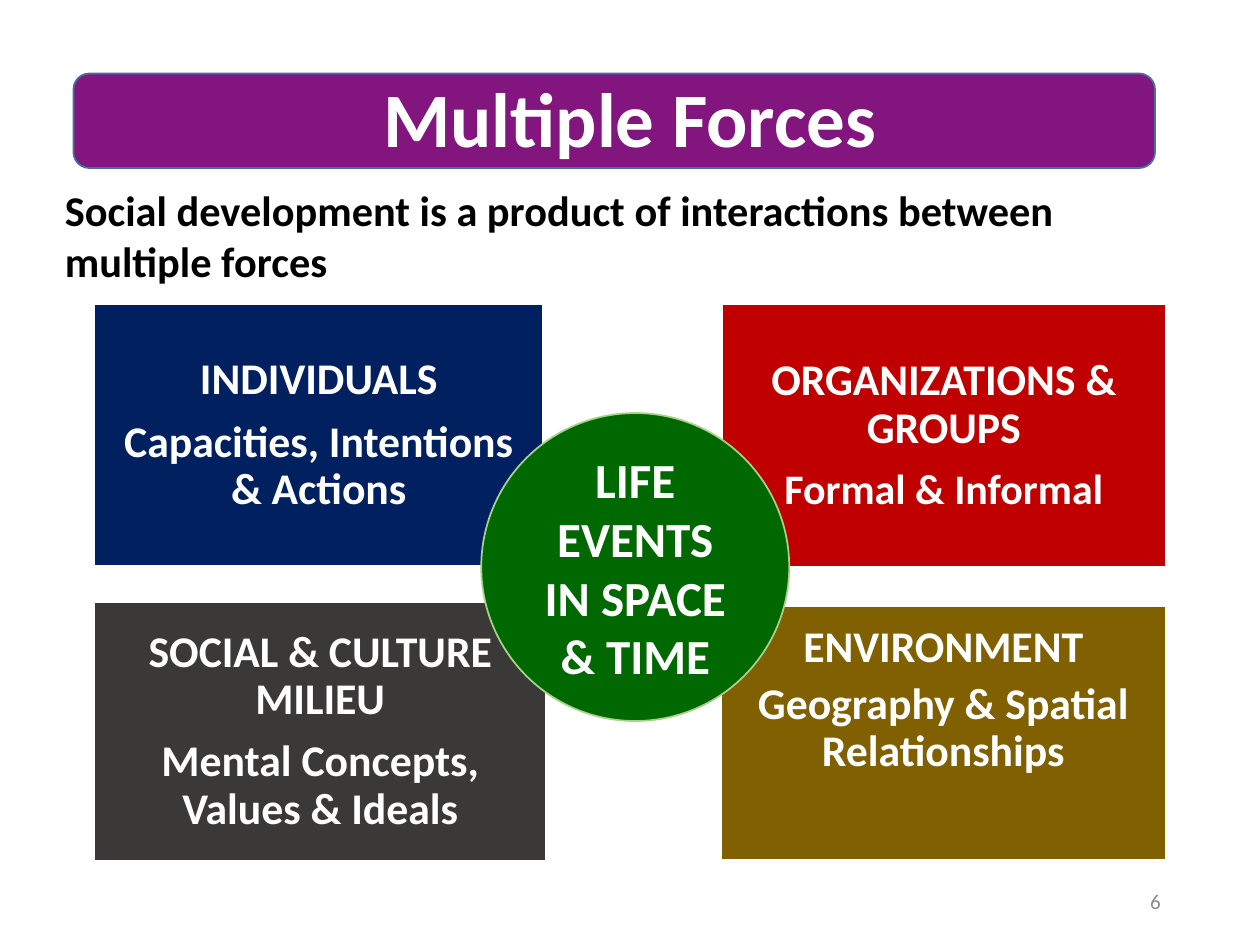
from pptx import Presentation
from pptx import util as u
from pptx.dml.color import RGBColor
from pptx.enum import shapes, text

WHITE = "FFFFFF"
MIDDLE, TOP = text.MSO_ANCHOR.MIDDLE, text.MSO_ANCHOR.TOP
LEFT, CENTER, RIGHT = text.PP_ALIGN.LEFT, text.PP_ALIGN.CENTER, text.PP_ALIGN.RIGHT

# position, fill, anchor, paragraphs (text, size, line spacing, space after)
FORCES = [
    ((54, 344.2, 258, 147.6), "3B3838", MIDDLE,
     [("SOCIAL & CULTURE MILIEU", 25, 0.9, 8.75),
      ("Mental Concepts, Values & Ideals", 25, 0.9, 8.75)]),
    ((54, 173.8, 256.3, 149.8), "002060", MIDDLE,
     [("INDIVIDUALS", 25, 0.9, 8.75),
      ("Capacities, Intentions\n& Actions", 25, 0.9, 8.75)]),
    ((412, 346.3, 254, 145), "806000", TOP,
     [("ENVIRONMENT", 25, 1.0, 6),
      ("Geography & Spatial Relationships", 25, 0.9, 8.75)]),
    ((412.6, 173.8, 253.4, 150.3), "C00000", MIDDLE,
     [("ORGANIZATIONS & GROUPS", 25, 0.9, 8.75),
      ("Formal & Informal", 24, 0.9, 8.4)]),
]


def rgb(hex_color):
    return RGBColor.from_string(hex_color)


def points(box):
    return [u.Pt(v) for v in box]


def add_panel(slide, kind, box, fill, line):
    sp = slide.shapes.add_shape(kind, *points(box))
    sp.shadow.inherit = False
    sp.fill.solid()
    sp.fill.fore_color.rgb = rgb(fill)
    sp.line.color.rgb = rgb(line)
    sp.line.width = u.Pt(1)
    return sp


def write(sp, paragraphs, color=WHITE, bold=True, align=CENTER, anchor=MIDDLE, inset=3.6):
    """Fill a shape with (text, size, line spacing, space after) paragraphs."""
    tf = sp.text_frame
    tf.word_wrap = True
    tf.vertical_anchor = anchor
    tf.margin_left = tf.margin_right = u.Pt(7.2)
    tf.margin_top = tf.margin_bottom = u.Pt(inset)
    for i, (words, size, spacing, after) in enumerate(paragraphs):
        p = tf.add_paragraph() if i else tf.paragraphs[0]
        p.alignment = align
        p.line_spacing = spacing
        p.space_after = u.Pt(after)
        for j, line in enumerate(words.split("\n")):
            if j:
                p.add_line_break()
            r = p.add_run()
            r.text = line
            r.font.name = "Calibri"
            r.font.size = u.Pt(size)
            r.font.bold = bold
            r.font.color.rgb = rgb(color)


def add_label(slide, box, words, size, **style):
    sp = slide.shapes.add_textbox(*points(box))
    write(sp, [(words, size, 1.0, 0)], **style)
    return sp


def main():
    prs = Presentation()
    prs.slide_width, prs.slide_height = u.Pt(720), u.Pt(540)
    slide = prs.slides.add_slide(prs.slide_layouts[6])
    kinds = shapes.MSO_SHAPE

    add_label(slide, (508.3, 500.4, 162, 28.8), "6", 12,
              color="8C8C8C", bold=False, align=RIGHT)
    add_panel(slide, kinds.ROUNDED_RECTANGLE, (42, 42, 618, 54), "83157E", "43739E")
    add_label(slide, (36, 21.6, 648, 90), "Multiple Forces", 44)
    intro = add_label(slide, (30, 102, 648, 66),
                      "Social development is a product of interactions between multiple forces",
                      24.2, color="000000", align=LEFT, anchor=TOP)
    intro.text_frame.paragraphs[0].space_before = u.Pt(4.8)

    for box, fill, anchor, paragraphs in FORCES:
        sp = add_panel(slide, kinds.RECTANGLE, box, fill, WHITE)
        write(sp, paragraphs, anchor=anchor, inset=7.2)

    circle = add_panel(slide, kinds.OVAL, (275, 236, 176, 176), "006800", "A9D18E")
    write(circle, [("LIFE EVENTS IN SPACE & TIME", 28, 1.0, 0)])
    prs.save("out.pptx")


if __name__ == "__main__":
    main()
